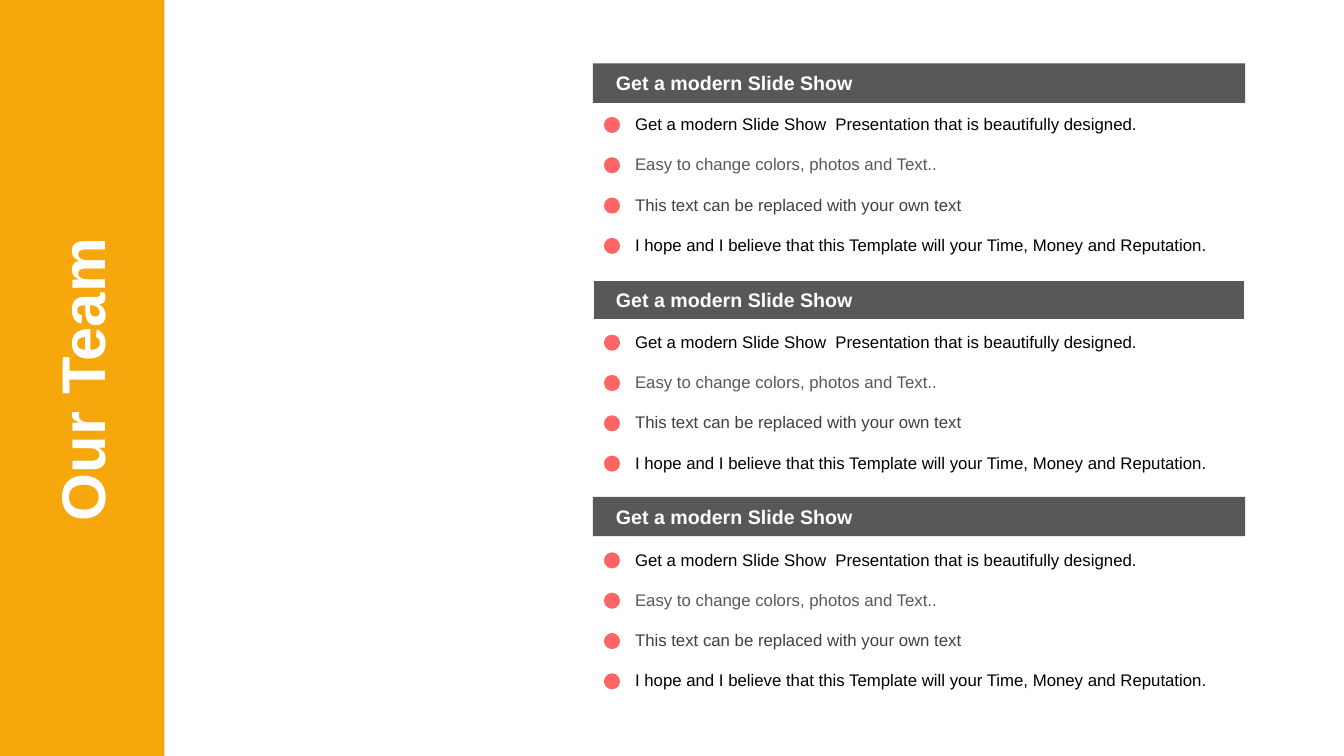
import pptx
import pptx.dml.color
import pptx.enum.shapes
import pptx.enum.text
import pptx.util

PX = 9144  # EMU; 100 px to the inch
SHAPES = pptx.enum.shapes.MSO_SHAPE
ANCHORS = pptx.enum.text.MSO_ANCHOR

ORANGE, GREY, CORAL, WHITE = "F5A70B", "595757", "FF6565", "FFFFFF"
HEADING = "Get a modern Slide Show"
POINTS = [
    ("Get a modern Slide Show  Presentation that is beautifully designed.", "000000"),
    ("Easy to change colors, photos and Text..", "595959"),
    ("This text can be replaced with your own text", "404040"),
    ("I hope and I believe that this Template will your Time, Money and Reputation.", "000000"),
]
SECTIONS = 3
BAR_PITCH, LIST_PITCH, POINT_PITCH = 215, 216, 40


def px(*lengths):
    return [pptx.util.Emu(length * PX) for length in lengths]


def color(hex_code):
    return pptx.dml.color.RGBColor.from_string(hex_code)


def add_block(page, kind, bounds, fill, outline=None):
    block = page.shapes.add_shape(kind, *px(*bounds))
    block.shadow.inherit = False
    block.fill.solid()
    block.fill.fore_color.rgb = color(fill)
    if outline:
        block.line.color.rgb = color(outline)
        block.line.width = pptx.util.Pt(1)
    else:
        block.line.fill.background()


def add_text(page, bounds, text, size, hex_code, bold=False, wrap=True, anchor=ANCHORS.TOP):
    box = page.shapes.add_textbox(*px(*bounds))
    frame = box.text_frame
    frame.word_wrap = wrap
    frame.vertical_anchor = anchor
    if anchor == ANCHORS.TOP:
        frame.auto_size = pptx.enum.text.MSO_AUTO_SIZE.SHAPE_TO_FIT_TEXT
    span = frame.paragraphs[0].add_run()
    span.text = text
    span.font.name = "Arial"
    span.font.size = pptx.util.Pt(size)
    span.font.bold = bold
    span.font.color.rgb = color(hex_code)
    return box


def add_section(page, index):
    """Add one heading bar with its bulleted points below."""
    bar_top = 63 + index * BAR_PITCH
    outline = WHITE if index == 1 else None
    add_block(page, SHAPES.RECTANGLE, (588, bar_top, 647, 39), GREY, outline)
    add_text(page, (601, bar_top + 4, 362, 31), HEADING, 14, WHITE,
             bold=True, anchor=ANCHORS.MIDDLE)
    for row, (text, hex_code) in enumerate(POINTS):
        top = 108 + index * LIST_PITCH + row * POINT_PITCH
        add_block(page, SHAPES.OVAL, (599, top + 8, 16, 16), CORAL)
        add_text(page, (620, top, 628, 30), text, 12, hex_code)


def main():
    deck = pptx.Presentation()
    deck.slide_width = pptx.util.Inches(13.33)
    deck.slide_height = pptx.util.Inches(7.5)
    page = deck.slides.add_slide(deck.slide_layouts[6])

    add_block(page, SHAPES.RECTANGLE, (0, 0, 163, 750), ORANGE)
    for index in range(SECTIONS):
        add_section(page, index)
    title = add_text(page, (-71, 333, 304, 84), "Our Team", 44, WHITE, bold=True, wrap=False)
    title.rotation = 270

    deck.save("out.pptx")


if __name__ == "__main__":
    main()
